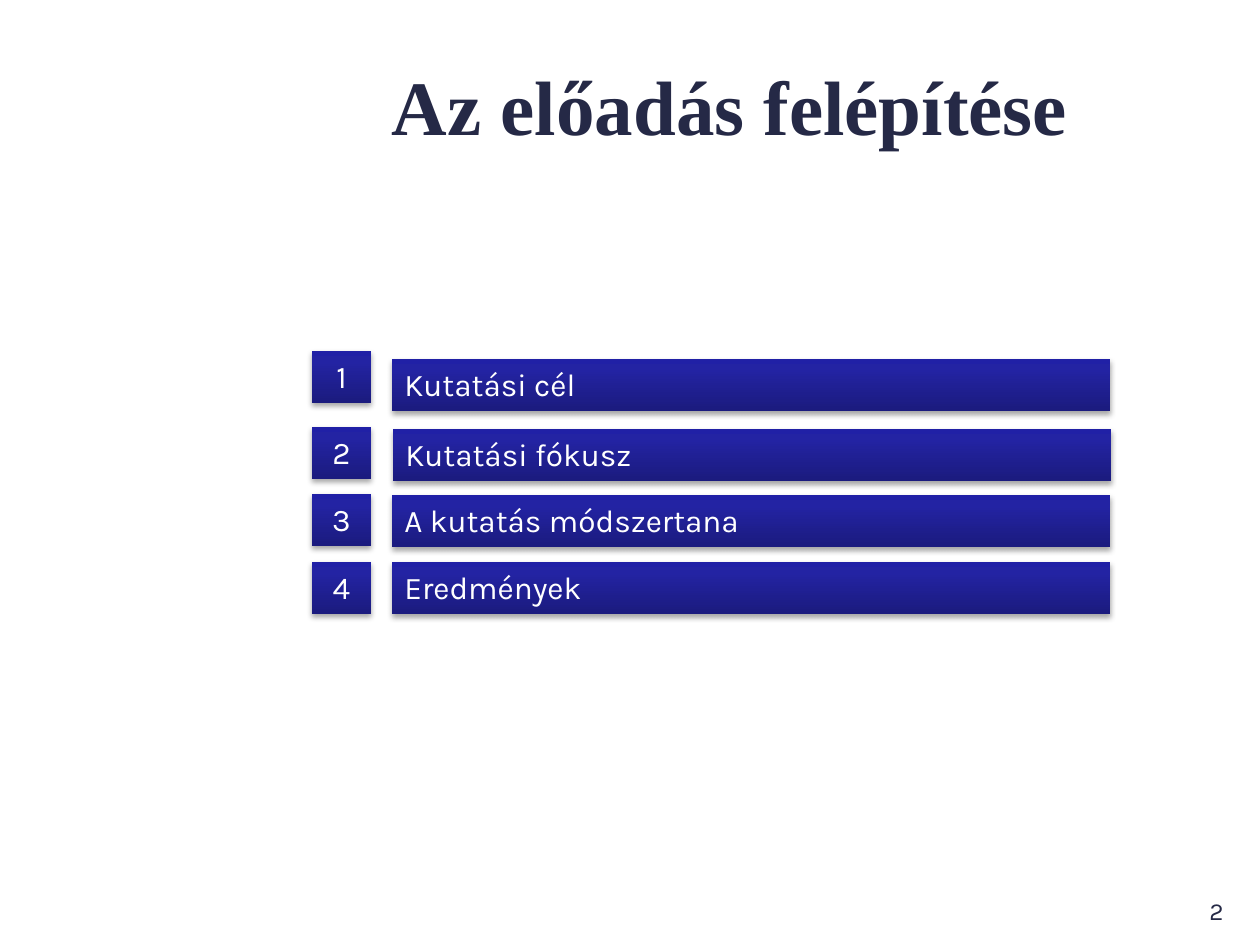
"""Build the agenda slide with four numbered gradient bars."""
import copy

import lxml.etree
import pptx
import pptx.dml.color
import pptx.enum.shapes
import pptx.enum.text
import pptx.oxml
import pptx.oxml.ns
import pptx.util

INK = pptx.dml.color.RGBColor(0x25, 0x29, 0x46)
WHITE = pptx.dml.color.RGBColor(0xFF, 0xFF, 0xFF)
GRADIENT = [
    (0, pptx.dml.color.RGBColor(0x1B, 0x1B, 0x7E)),
    (0.8, pptx.dml.color.RGBColor(0x23, 0x23, 0xA3)),
    (1, pptx.dml.color.RGBColor(0x20, 0x20, 0xA6)),
]
SHADOW = (
    f'<a:effectLst {pptx.oxml.ns.nsdecls("a")}>'
    '<a:outerShdw blurRad="40000" dist="23000" dir="5400000" rotWithShape="0">'
    '<a:srgbClr val="000000"><a:alpha val="35000"/></a:srgbClr>'
    '</a:outerShdw></a:effectLst>'
)
ALIGN = pptx.enum.text.PP_ALIGN
ANCHOR = pptx.enum.text.MSO_ANCHOR


def px(length):
    return pptx.util.Emu(round(length * 914400 / 126))


def write(box, text, font_name, size, color, align, anchor):
    frame = box.text_frame
    frame.word_wrap = True
    frame.vertical_anchor = anchor
    para = frame.paragraphs[0]
    para.text = text
    para.alignment = align
    para.font.name = font_name
    para.font.size = pptx.util.Pt(size)
    para.font.color.rgb = color
    return para


deck = pptx.Presentation()
deck.slide_width = px(1260)
deck.slide_height = px(945)
page = deck.slides.add_slide(deck.slide_layouts[6])

title = page.shapes.add_textbox(px(263), px(26), px(934), px(158))
heading = write(title, "Az előadás felépítése", "Times New Roman", 44, INK,
                ALIGN.CENTER, ANCHOR.MIDDLE)
heading.font.bold = True

agenda = [
    (351, 392, 359, "Kutatási cél"),
    (427, 393, 429, "Kutatási fókusz"),
    (494, 392, 495, "A kutatás módszertana"),
    (562, 392, 562, "Eredmények"),
]
for number, (number_top, bar_left, bar_top, topic) in enumerate(agenda, start=1):
    for left, top, width, text, align in [
        (312, number_top, 59, str(number), ALIGN.CENTER),
        (bar_left, bar_top, 718, topic, ALIGN.LEFT),
    ]:
        bar = page.shapes.add_shape(pptx.enum.shapes.MSO_SHAPE.RECTANGLE,
                                    px(left), px(top), px(width), px(52))
        bar.line.fill.background()
        bar.fill.gradient()
        bar.fill.gradient_angle = 90
        stop_list = bar._element.spPr.find(".//" + pptx.oxml.ns.qn("a:gsLst"))
        stop_list.append(copy.deepcopy(stop_list[0]))
        for stop, (position, color) in zip(bar.fill.gradient_stops, GRADIENT):
            stop.position = position
            stop.color.rgb = color
        bar._element.spPr.append(pptx.oxml.parse_xml(SHADOW))
        write(bar, text, "Karla", 18, WHITE, align, ANCHOR.TOP)
        bar.text_frame.auto_size = pptx.enum.text.MSO_AUTO_SIZE.SHAPE_TO_FIT_TEXT

page_number = page.shapes.add_textbox(px(903), px(890), px(333), px(37))
write(page_number, "2", "Karla", 14, INK, ALIGN.RIGHT, ANCHOR.TOP)

deck.save("out.pptx")
